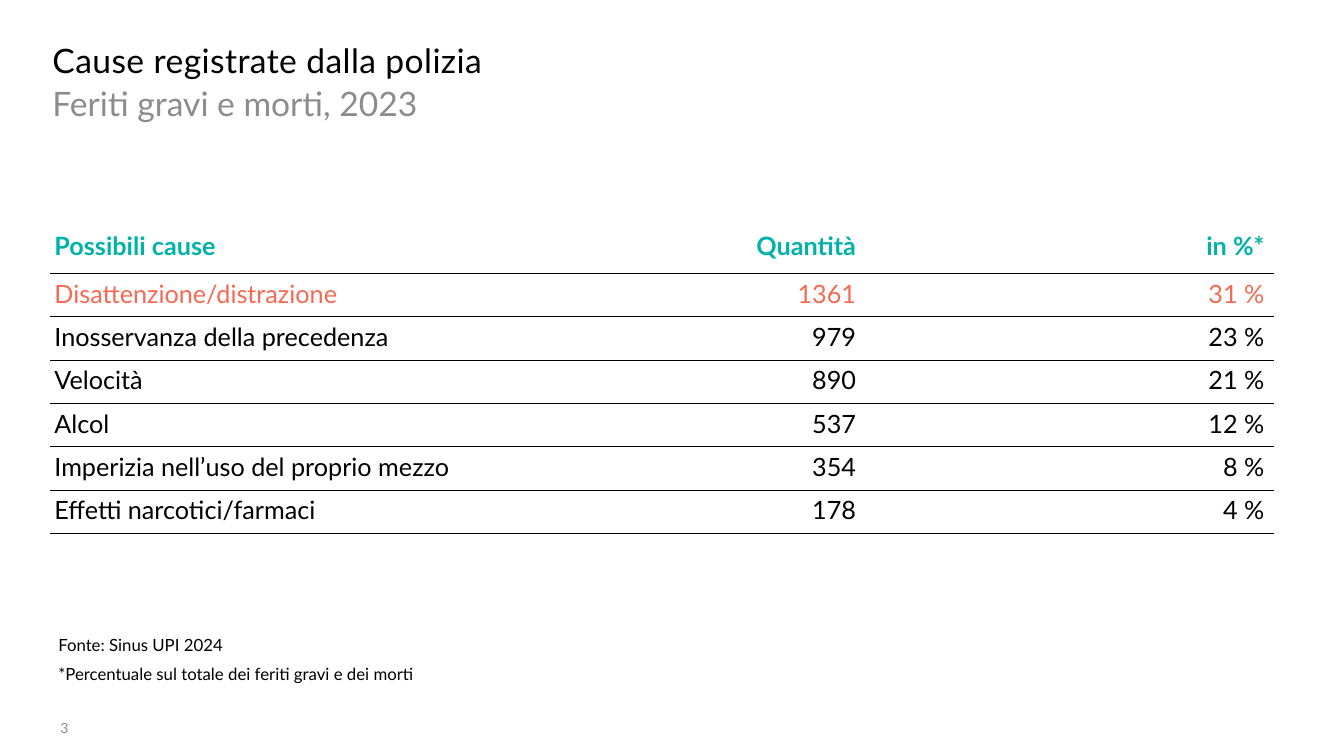
from lxml import etree
from pptx import Presentation
from pptx.dml.color import RGBColor
from pptx.enum import text
from pptx.oxml import ns
from pptx.util import Inches, Pt

INK = {"black": "000000", "grey": "8C8C8C", "teal": "00B2AA", "coral": "F86852"}


def write(par, words, size, ink, bold=False):
    run = par.add_run()
    run.text = words
    font = run.font
    font.name, font.size, font.bold = "Lato", Pt(size), bold
    font.color.rgb = RGBColor.from_string(INK[ink])
    return run


def rule(cell, side, width):
    props = cell._tc.get_or_add_tcPr()
    line = etree.Element(ns.qn(f"a:ln{side}"), w=str(Pt(width)))
    if width:
        fill = etree.SubElement(line, ns.qn("a:solidFill"))
        etree.SubElement(fill, ns.qn("a:srgbClr"), val=INK["black"])
    else:
        etree.SubElement(line, ns.qn("a:noFill"))
    props.insert("LRTB".index(side), line)


deck = Presentation()
deck.slide_width, deck.slide_height = Inches(13.33), Inches(7.5)
slide = deck.slides.add_slide(deck.slide_layouts[1])

heads = [
    (slide.shapes.title, 0.4, 0.35, "Cause registrate dalla polizia", "black"),
    (slide.placeholders[1], 0.8, 0.39, "Feriti gravi e morti, 2023", "grey"),
]
for shape, top, height, words, ink in heads:
    shape.left, shape.top = Inches(0.52), Inches(top)
    shape.width, shape.height = Inches(12.28), Inches(height)
    frame = shape.text_frame
    frame.margin_left = frame.margin_right = frame.margin_top = frame.margin_bottom = 0
    frame.vertical_anchor = text.MSO_ANCHOR.TOP
    frame.auto_size = text.MSO_AUTO_SIZE.NONE
    par = frame.paragraphs[0]
    par.alignment = text.PP_ALIGN.LEFT
    par.space_before = 0
    run = write(par, words, 24, ink)
    if ink == "black":
        run.font._element.set("spc", "30")
    else:
        par.line_spacing, par.space_after = 1.05, Pt(12)
        props = par._p.get_or_add_pPr()
        props.set("marL", "0")
        props.set("indent", "0")
        etree.SubElement(props, ns.qn("a:buNone"))

rows = [
    ("Possibili cause", "Quantità", "in %*"),
    ("Disattenzione/distrazione", "1361", "31 %"),
    ("Inosservanza della precedenza", "979", "23 %"),
    ("Velocità", "890", "21 %"),
    ("Alcol", "537", "12 %"),
    ("Imperizia nell’uso del proprio mezzo", "354", "8 %"),
    ("Effetti narcotici/farmaci", "178", "4 %"),
    ("", "", ""),
]
last = len(rows) - 1
grid = slide.shapes.add_table(
    len(rows), 3, Inches(0.5), Inches(2.24), Inches(12.14), Inches(3.48)
).table
grid.first_row = grid.horz_banding = False
style = grid._tbl.tblPr.find(ns.qn("a:tableStyleId"))
style.text = "{2D5ABB26-0587-4C30-8999-92F81FD0307C}"
for col, width in zip(grid.columns, (6.43, 1.66, 4.05)):
    col.width = Inches(width)
for i, row in enumerate(rows):
    grid.rows[i].height = Inches(0.43 if i else 0.47)
    ink = {0: "teal", 1: "coral"}.get(i, "black")
    for j, words in enumerate(row):
        cell = grid.cell(i, j)
        cell.margin_left, cell.margin_right = Inches(0.04), Inches(0.1)
        cell.margin_top = cell.margin_bottom = Inches(0.05)
        cell.fill.background()
        above = 0 if i == 0 else 1 if i == last else 0.5
        below = 0 if i == last else 1 if i == last - 1 else 0.5
        for side, width in zip("LRTB", (0, 0, above, below)):
            rule(cell, side, width)
        par = cell.text_frame.paragraphs[0]
        par.alignment = text.PP_ALIGN.RIGHT if j else text.PP_ALIGN.LEFT
        if words:
            write(par, words, 18, ink, i == 0)

note = slide.shapes.add_textbox(Inches(0.48), Inches(6.25), Inches(12.43), Inches(0.59))
frame = note.text_frame
frame.word_wrap = True
lines = ["Fonte: Sinus UPI 2024", "*Percentuale sul totale dei feriti gravi e dei morti"]
for i, words in enumerate(lines):
    par = frame.add_paragraph() if i else frame.paragraphs[0]
    par.space_after = Pt(6)
    write(par, words, 12, "black")

page = slide.shapes.add_textbox(Inches(0.6), Inches(7.14), Inches(0.89), Inches(0.18))
frame = page.text_frame
frame.word_wrap = True
frame.margin_left = frame.margin_right = frame.margin_top = frame.margin_bottom = 0
write(frame.paragraphs[0], "3", 10, "grey")

deck.save("out.pptx")
